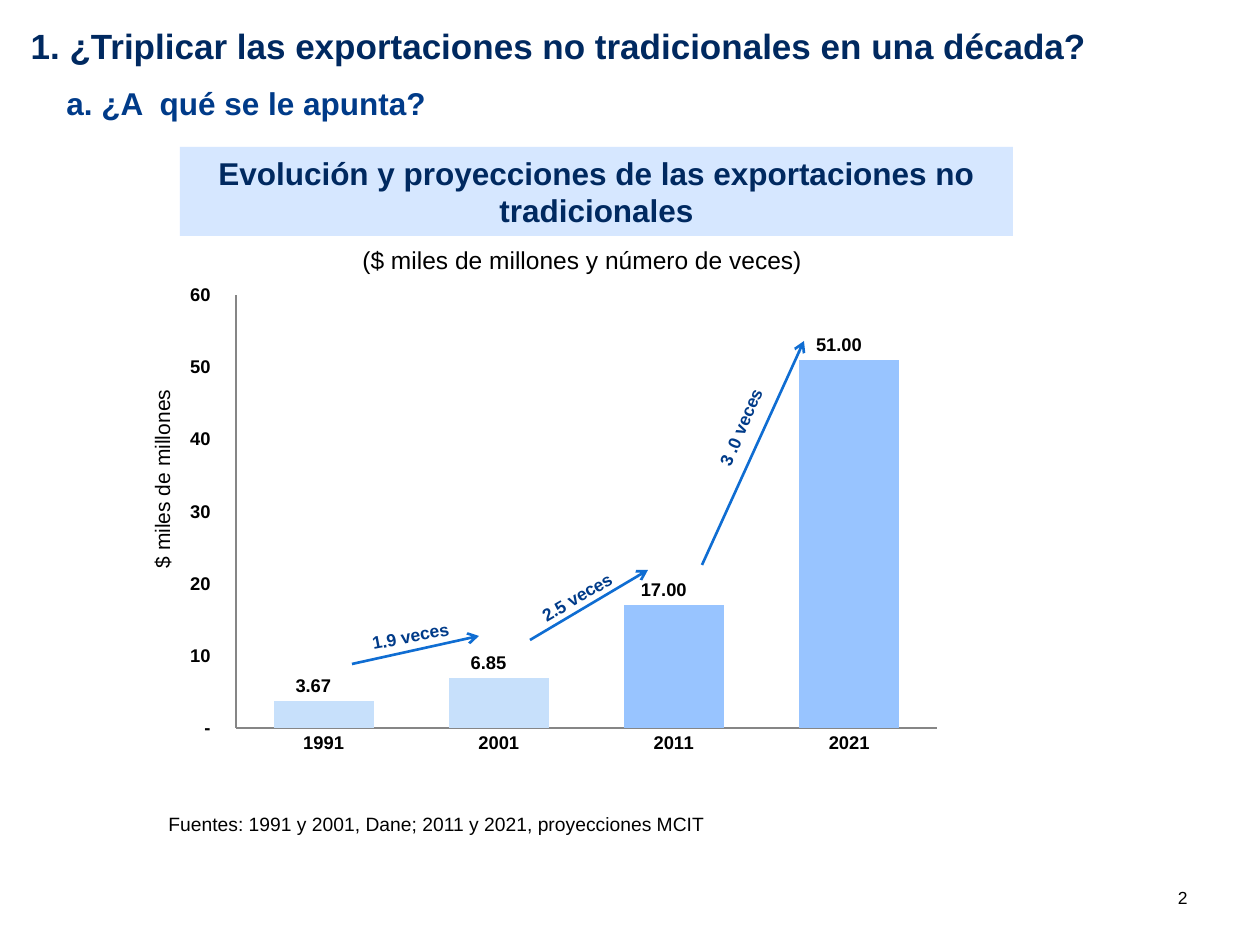
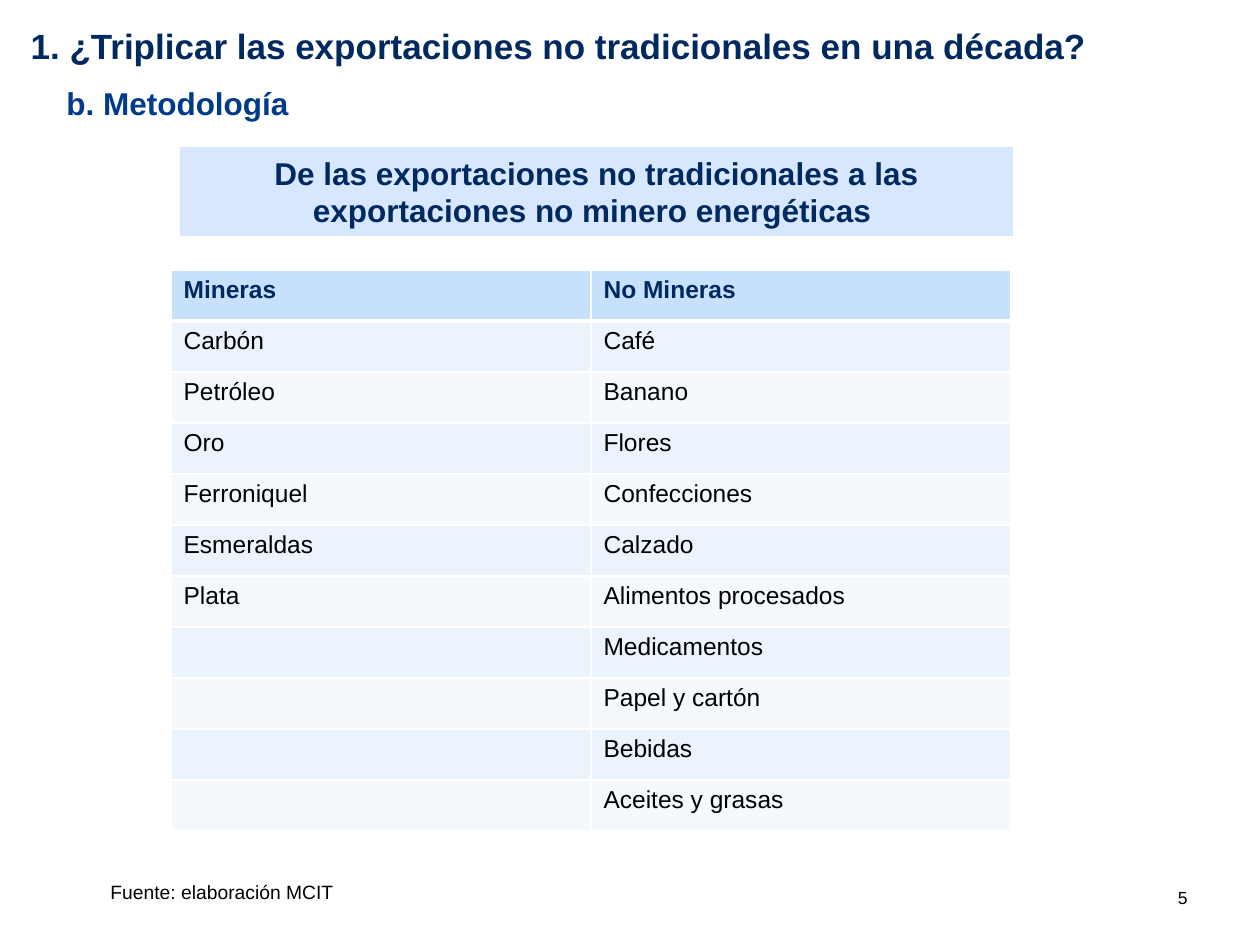
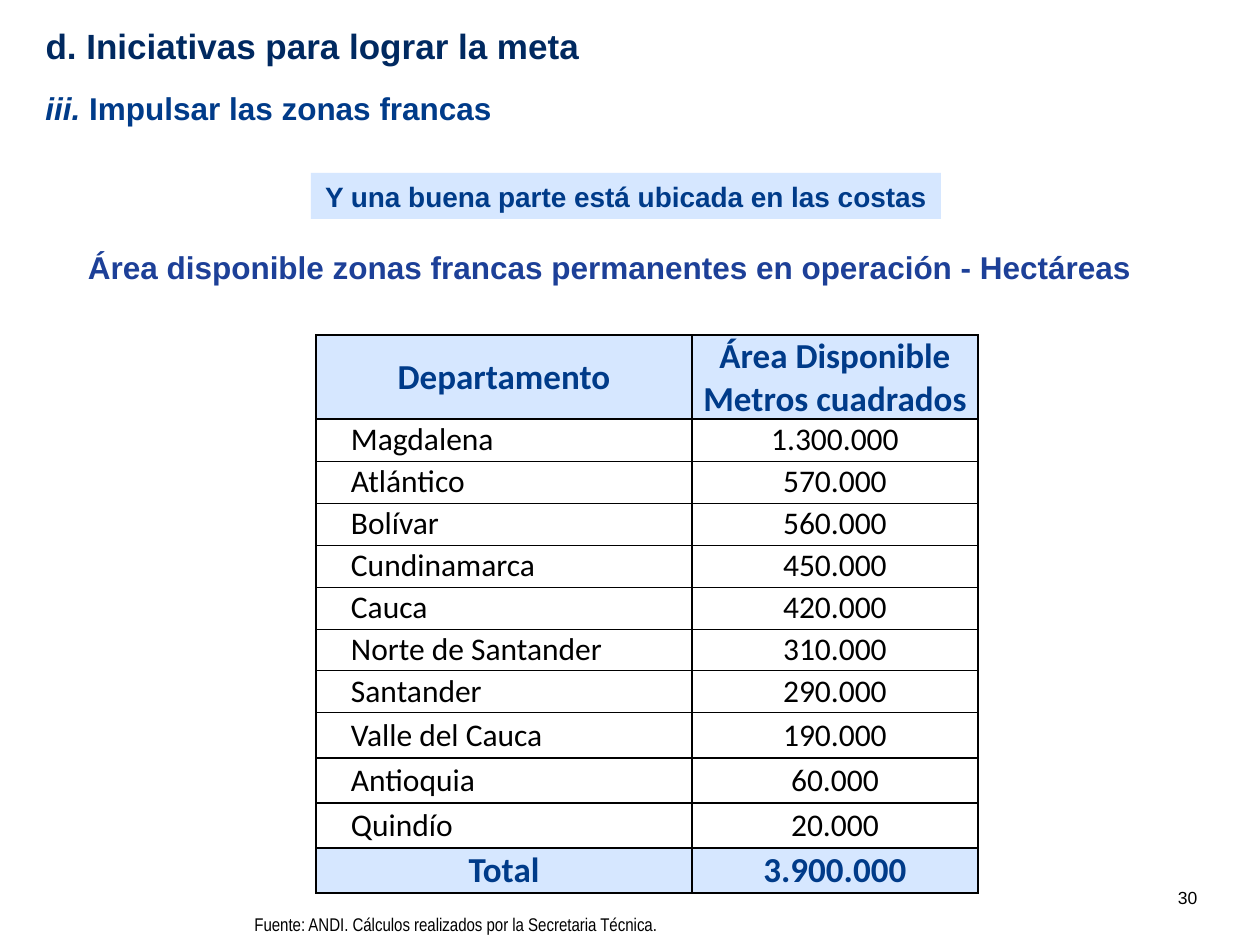
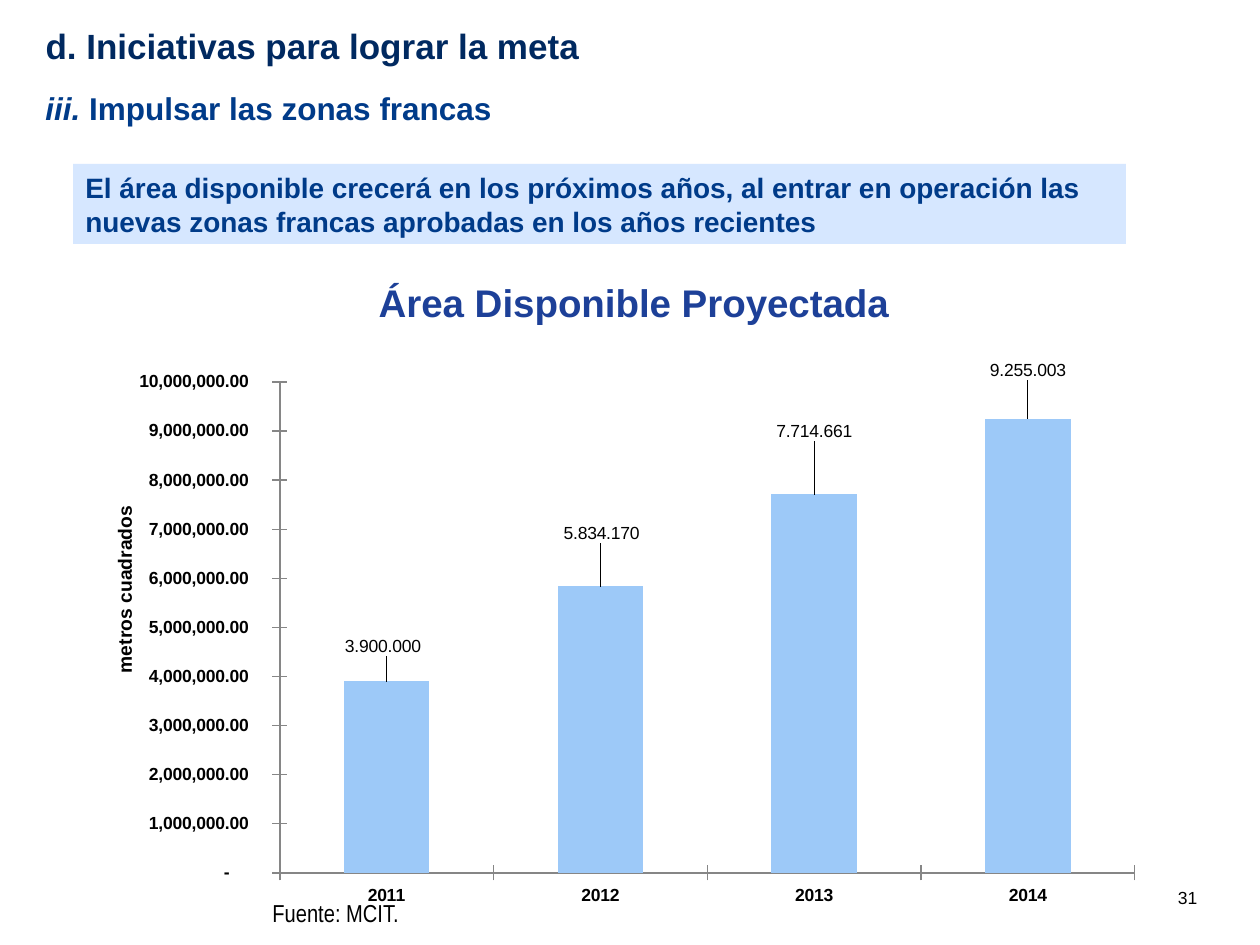
from dataclasses import dataclass

from lxml import etree
from pptx import Presentation
from pptx import util as u
from pptx.chart.data import CategoryChartData
from pptx.dml.color import RGBColor
from pptx.enum import chart as charts, shapes, text
from pptx.oxml import parse_xml
from pptx.oxml.ns import nsdecls, qn


@dataclass(frozen=True)
class Theme:
    font: str = "Arial"
    narrow: str = "Arial Narrow"
    table_font: str = "Calibri"
    navy: str = "002960"
    blue: str = "003B89"
    heading: str = "1D4098"
    arrow: str = "0F6DD2"
    band: str = "D6E7FF"
    header: str = "C7E0FB"
    stripes: tuple = ("EBF3FD", "F5F9FE")
    bar_past: str = "C7E0FB"
    bar_projected: str = "98C4FF"
    bar_area: str = "9DC9F8"
    axis: str = "868686"
    black: str = "000000"
    white: str = "FFFFFF"
    title_size: float = 20
    subtitle_size: float = 18
    band_size: float = 16
    body_size: float = 14
    note_size: float = 11
    small_size: float = 10


THEME = Theme()
EMU_PER_PX = 914400 / 126
SLIDE_SIZE = (1260, 945)
LEFT, CENTER = text.PP_ALIGN.LEFT, text.PP_ALIGN.CENTER
TOP, MIDDLE = text.MSO_ANCHOR.TOP, text.MSO_ANCHOR.MIDDLE

# ---- Content: boxes are (left, top, width, height) in px ----
EXPORTS = {
    "title": "1. ¿Triplicar las exportaciones no tradicionales en una década?",
    "title_box": (18, 18, 1082, 78),
    "subtitle_box": (54, 78, 1050, 50),
    "band_box": (180, 147, 833, 89),
}
INITIATIVES = {
    "title": "d. Iniciativas para lograr la meta",
    "title_box": (33, 18, 1116, 78),
    "subtitle_box": (33, 83, 751, 50),
}
FREE_ZONES = [("iii. ", True), ("Impulsar las zonas francas", False)]

EXPORT_CHART = {
    "box": (169, 275, 784, 490),
    "plot": (236, 295, 701, 433),
    "data": [("1991", 3.67), ("2001", 6.85), ("2011", 17), ("2021", 51)],
    "maximum": 60, "step": 10, "gap": 75, "size": 10.5,
    "color": THEME.bar_past,
    "point_colors": {2: THEME.bar_projected, 3: THEME.bar_projected},
    "tick": charts.XL_TICK_MARK.NONE,
    "axis_format": r'_-* #,##0\ _€_-;\-* #,##0\ _€_-;_-* "-"\ _€_-;_-@_-',
}
GROWTH_ARROWS = [  # start, end, label, label box, rotation, alignment
    ((352, 664), (479, 636), "1.9 veces", (345, 619, 131, 34), 349.2, CENTER),
    ((530, 640), (648, 570), "2.5 veces", (517, 580, 120, 34), 329.7, CENTER),
    ((702, 565), (804, 341), "3 .0 veces", (675, 392, 147, 34), 293.1, LEFT),
]

MINING = ["Carbón", "Petróleo", "Oro", "Ferroniquel", "Esmeraldas", "Plata"]
NON_MINING = ["Café", "Banano", "Flores", "Confecciones", "Calzado",
              "Alimentos procesados", "Medicamentos", "Papel y cartón",
              "Bebidas", "Aceites y grasas"]

AREAS = [
    ("Magdalena", "1.300.000"), ("Atlántico", "570.000"), ("Bolívar", "560.000"),
    ("Cundinamarca", "450.000"), ("Cauca", "420.000"),
    ("Norte de Santander", "310.000"), ("Santander", "290.000"),
    ("Valle del Cauca", "190.000"), ("Antioquia", "60.000"), ("Quindío", "20.000"),
]
AREA_HEADER = ("Departamento", "Área Disponible\nMetros cuadrados")
AREA_TOTAL = ("Total", "3.900.000")

AREA_CHART = {
    "box": (115, 360, 1042, 556),
    "plot": (280, 382, 855, 491),
    "data": [("2011", 3900000), ("2012", 5834170), ("2013", 7714661), ("2014", 9255003)],
    "maximum": 10000000, "step": 1000000, "gap": 150, "size": THEME.small_size,
    "color": THEME.bar_area,
    "point_colors": {},
    "tick": charts.XL_TICK_MARK.CROSS,
    "axis_format": r'_-* #,##0.00\ _€_-;\-* #,##0.00\ _€_-;_-* "-"??\ _€_-;_-@_-',
}
AREA_LABELS = [  # text, shift in px from the outside end of the bar
    ("3.900.000", (-4, -20)), ("5.834.170", (1, -38)),
    ("7.714.661", (0, -48)), ("9.255.003", (0, -33)),
]


# ---- Text ----
def px(length):
    return u.Emu(round(length * EMU_PER_PX))


def rgb(color):
    return RGBColor.from_string(color)


def style_font(font, size, color, bold=False, name=THEME.font, italic=False):
    font.name, font.size, font.bold, font.italic = name, u.Pt(size), bold, italic
    font.color.rgb = rgb(color)


def write(frame, content, size, color, bold=False, name=THEME.font, align=LEFT):
    """Content is a string (one paragraph a line) or a list of (words, italic)."""
    if isinstance(content, str):
        lines = [[(line, False)] for line in content.split("\n")]
    else:
        lines = [content]
    for index, line in enumerate(lines):
        paragraph = frame.add_paragraph() if index else frame.paragraphs[0]
        paragraph.alignment = align
        for words, italic in line:
            run = paragraph.add_run()
            run.text = words
            style_font(run.font, size, color, bold, name, italic)


def place(shape, box):
    shape.left, shape.top, shape.width, shape.height = map(px, box)


def add_text(slide, box, content, size, color=THEME.black, bold=False,
             name=THEME.font, align=LEFT, anchor=TOP, rotation=0):
    shape = slide.shapes.add_textbox(*map(px, box))
    shape.rotation = rotation
    frame = shape.text_frame
    frame.word_wrap = True
    frame.vertical_anchor = anchor
    write(frame, content, size, color, bold, name, align)
    return shape


def add_band(slide, box, content, size, color, align=CENTER):
    band = slide.shapes.add_shape(shapes.MSO_SHAPE.RECTANGLE, *map(px, box))
    band.shadow.inherit = False
    band.fill.solid()
    band.fill.fore_color.rgb = rgb(THEME.band)
    band.line.fill.background()
    band.text_frame.word_wrap = True
    write(band.text_frame, content, size, color, True, align=align)


def start_slide(presentation, section, subtitle, number):
    slide = presentation.slides.add_slide(presentation.slide_layouts[5])
    title = slide.shapes.title
    place(title, section["title_box"])
    frame = title.text_frame
    frame.vertical_anchor = TOP
    frame.auto_size = text.MSO_AUTO_SIZE.NONE
    write(frame, section["title"], THEME.title_size, THEME.navy, True)
    add_text(slide, section["subtitle_box"], subtitle, THEME.subtitle_size,
             THEME.blue, True)
    page = add_text(slide, (1178, 887, 27, 21), number, THEME.small_size).text_frame
    page.word_wrap = False
    page.margin_left = page.margin_top = page.margin_right = page.margin_bottom = 0
    return slide


# ---- Lines and tables ----
def add_arrow(slide, start, end):
    arrow = slide.shapes.add_connector(
        shapes.MSO_CONNECTOR.STRAIGHT, *map(px, start + end))
    arrow.line.color.rgb = rgb(THEME.arrow)
    arrow.line.width = u.Pt(1.5)
    etree.SubElement(arrow.line._get_or_add_ln(), qn("a:tailEnd"), type="arrow")
    etree.SubElement(arrow._element.spPr, qn("a:effectLst"))


def set_borders(cell, color, left, right, top, bottom):
    properties = cell._tc.get_or_add_tcPr()
    sides = (("L", left), ("R", right), ("T", top), ("B", bottom))
    for index, (side, weight) in enumerate(sides):
        properties.insert(index, parse_xml(
            f'<a:ln{side} {nsdecls("a")} w="{u.Pt(weight)}"><a:solidFill>'
            f'<a:srgbClr val="{color}"/></a:solidFill></a:ln{side}>'))


def add_table(slide, left, top, widths, heights):
    table = slide.shapes.add_table(
        len(heights), len(widths),
        *map(px, (left, top, sum(widths), sum(heights)))).table
    table.first_row = table.horz_banding = False
    for column, width in zip(table.columns, widths):
        column.width = px(width)
    for row, height in zip(table.rows, heights):
        row.height = px(height)
    return table


def fill_cell(cell, color):
    if color:
        cell.fill.solid()
        cell.fill.fore_color.rgb = rgb(color)
    else:
        cell.fill.background()


# ---- Charts ----
def manual_layout(fractions, inner=False):
    target = '<c:layoutTarget val="inner"/>' if inner else ""
    modes = '<c:xMode val="edge"/><c:yMode val="edge"/>' if inner else ""
    values = "".join(f'<c:{key} val="{value:.4f}"/>'
                     for key, value in zip("xywh", fractions))
    return parse_xml(f'<c:layout {nsdecls("c")}><c:manualLayout>{target}{modes}'
                     f'{values}</c:manualLayout></c:layout>')


def add_column_chart(slide, settings):
    left, top, width, height = settings["box"]
    data = CategoryChartData()
    data.categories = [category for category, _ in settings["data"]]
    data.add_series("Series 1", [value for _, value in settings["data"]])
    chart = slide.shapes.add_chart(charts.XL_CHART_TYPE.COLUMN_CLUSTERED,
                                   *map(px, settings["box"]), data).chart
    chart.has_title = chart.has_legend = False
    style_font(chart.font, settings["size"], THEME.black, True)

    # Axes
    for axis in (chart.category_axis, chart.value_axis):
        axis.has_major_gridlines = False
        axis.major_tick_mark = settings["tick"]
        axis.minor_tick_mark = charts.XL_TICK_MARK.NONE
        axis.format.line.color.rgb = rgb(THEME.axis)
    value_axis = chart.value_axis
    value_axis.minimum_scale = 0
    value_axis.maximum_scale = settings["maximum"]
    value_axis.major_unit = settings["step"]
    value_axis.tick_labels.number_format = settings["axis_format"]
    value_axis.tick_labels.number_format_is_linked = False

    # Bars and labels
    plot = chart.plots[0]
    plot.vary_by_categories = False
    plot.gap_width = settings["gap"]
    series = plot.series[0]
    bars = [(series, settings["color"])]
    bars += [(series.points[i], color) for i, color in settings["point_colors"].items()]
    for bar, color in bars:
        bar.format.fill.solid()
        bar.format.fill.fore_color.rgb = rgb(color)
    labels = series.data_labels
    labels.show_value = True
    labels.position = charts.XL_LABEL_POSITION.OUTSIDE_END
    labels.number_format = r"#,##0.00\ _€_-"
    labels.number_format_is_linked = False

    # Plot area
    plot_left, plot_top, plot_width, plot_height = settings["plot"]
    area = chart._chartSpace.chart.plotArea
    for layout in area.findall(qn("c:layout")):
        area.remove(layout)
    area.insert(0, manual_layout(
        ((plot_left - left) / width, (plot_top - top) / height,
         plot_width / width, plot_height / height), inner=True))
    return chart


def add_point_labels(chart, labels, chart_box):
    series = chart.plots[0].series[0]
    for index, (words, (shift_x, shift_y)) in enumerate(labels):
        label = series.points[index].data_label
        write(label.text_frame, words, THEME.small_size, THEME.black, align=CENTER)
        label.position = charts.XL_LABEL_POSITION.OUTSIDE_END
        element = series.data_labels._element.findall(qn("c:dLbl"))[index]
        element.insert(1, manual_layout((shift_x / chart_box[2], shift_y / chart_box[3])))


# ---- Slides ----
def build_export_goal(presentation):
    slide = start_slide(presentation, EXPORTS, "a. ¿A  qué se le apunta?", "2")
    add_band(slide, EXPORTS["band_box"],
             "Evolución y proyecciones de las exportaciones no tradicionales",
             THEME.subtitle_size, THEME.navy)
    add_column_chart(slide, EXPORT_CHART)
    for start, end, label, box, rotation, align in GROWTH_ARROWS:
        add_arrow(slide, start, end)
        add_text(slide, box, label, THEME.small_size, THEME.blue, True,
                 align=align, rotation=rotation)
    add_text(slide, (156, 806, 798, 37),
             "Fuentes: 1991 y 2001, Dane; 2011 y 2021, proyecciones MCIT",
             THEME.note_size)
    add_text(slide, (350, 239, 494, 43), "($ miles de millones y número de veces)",
             THEME.body_size)
    add_text(slide, (16, 460, 292, 38), "$ miles de millones", 12,
             align=CENTER, rotation=270)


def build_product_groups(presentation):
    slide = start_slide(presentation, EXPORTS, "b. Metodología", "5")
    add_band(slide, EXPORTS["band_box"],
             "De las exportaciones no tradicionales a las "
             "exportaciones no minero energéticas ",
             THEME.subtitle_size, THEME.navy)
    add_text(slide, (98, 874, 798, 37), "Fuente: elaboración MCIT", THEME.note_size)

    columns = (["Mineras"] + MINING, ["No Mineras"] + NON_MINING)
    row_count = max(map(len, columns))
    table = add_table(slide, 171, 270, [420, 420], [51] * row_count)
    for column, entries in enumerate(columns):
        for row in range(row_count):
            cell = table.cell(row, column)
            is_header = row == 0
            fill_cell(cell, THEME.header if is_header else THEME.stripes[(row - 1) % 2])
            set_borders(cell, THEME.white, 1, 1, 3 if row == 1 else 1,
                        3 if is_header else 1)
            if row < len(entries):
                write(cell.text_frame, entries[row], THEME.body_size,
                      THEME.navy if is_header else THEME.black, is_header)


def build_available_area(presentation):
    slide = start_slide(presentation, INITIATIVES, FREE_ZONES, "30")
    add_text(slide, (43, 242, 1142, 50),
             "Área disponible zonas francas permanentes en operación - Hectáreas ",
             THEME.subtitle_size, THEME.heading, True, align=CENTER)
    add_text(slide, (242, 906, 571, 37),
             "Fuente: ANDI. Cálculos realizados por la Secretaria Técnica.",
             10.5, name=THEME.narrow, anchor=MIDDLE)
    add_band(slide, (311, 173, 630, 46), "Y una buena parte está ubicada en las costas",
             THEME.band_size, THEME.blue)

    rows = [AREA_HEADER] + AREAS + [AREA_TOTAL]
    last = len(rows) - 1
    table = add_table(slide, 316, 335, [376, 286], [84] + [42] * 7 + [45] * 4)
    rules = [1 if line <= 1 or line >= 9 else 0.5 for line in range(len(rows) + 1)]
    for row, entries in enumerate(rows):
        strong = row in (0, last)
        for column, entry in enumerate(entries):
            cell = table.cell(row, column)
            is_name = column == 0 and not strong
            cell.vertical_anchor = MIDDLE
            cell.margin_top = cell.margin_right = cell.margin_bottom = 0
            cell.margin_left = px(35 if is_name else 0)
            fill_cell(cell, THEME.band if strong else None)
            set_borders(cell, THEME.black, 1, 1, rules[row], rules[row + 1])
            write(cell.text_frame, entry, 20 if strong else 18,
                  THEME.blue if strong else THEME.black, strong,
                  THEME.table_font, LEFT if is_name else CENTER)


def build_projected_area(presentation):
    slide = start_slide(presentation, INITIATIVES, FREE_ZONES, "31")
    add_text(slide, (160, 273, 948, 59), "Área Disponible Proyectada", 22,
             THEME.heading, True, align=CENTER)
    add_text(slide, (260, 891, 748, 43), "Fuente: MCIT.", THEME.body_size,
             name=THEME.narrow, anchor=MIDDLE)
    add_band(slide, (73, 164, 1053, 80),
             "El área disponible crecerá en los próximos años, al entrar en operación "
             "las nuevas zonas francas aprobadas en los años recientes",
             THEME.band_size, THEME.blue, LEFT)
    chart = add_column_chart(slide, AREA_CHART)
    add_point_labels(chart, AREA_LABELS, AREA_CHART["box"])
    add_text(slide, (15, 571, 220, 37), "metros cuadrados", THEME.note_size,
             bold=True, align=CENTER, rotation=270)


def main():
    presentation = Presentation()
    presentation.slide_width, presentation.slide_height = map(px, SLIDE_SIZE)
    build_export_goal(presentation)
    build_product_groups(presentation)
    build_available_area(presentation)
    build_projected_area(presentation)
    presentation.save("out.pptx")


if __name__ == "__main__":
    main()
